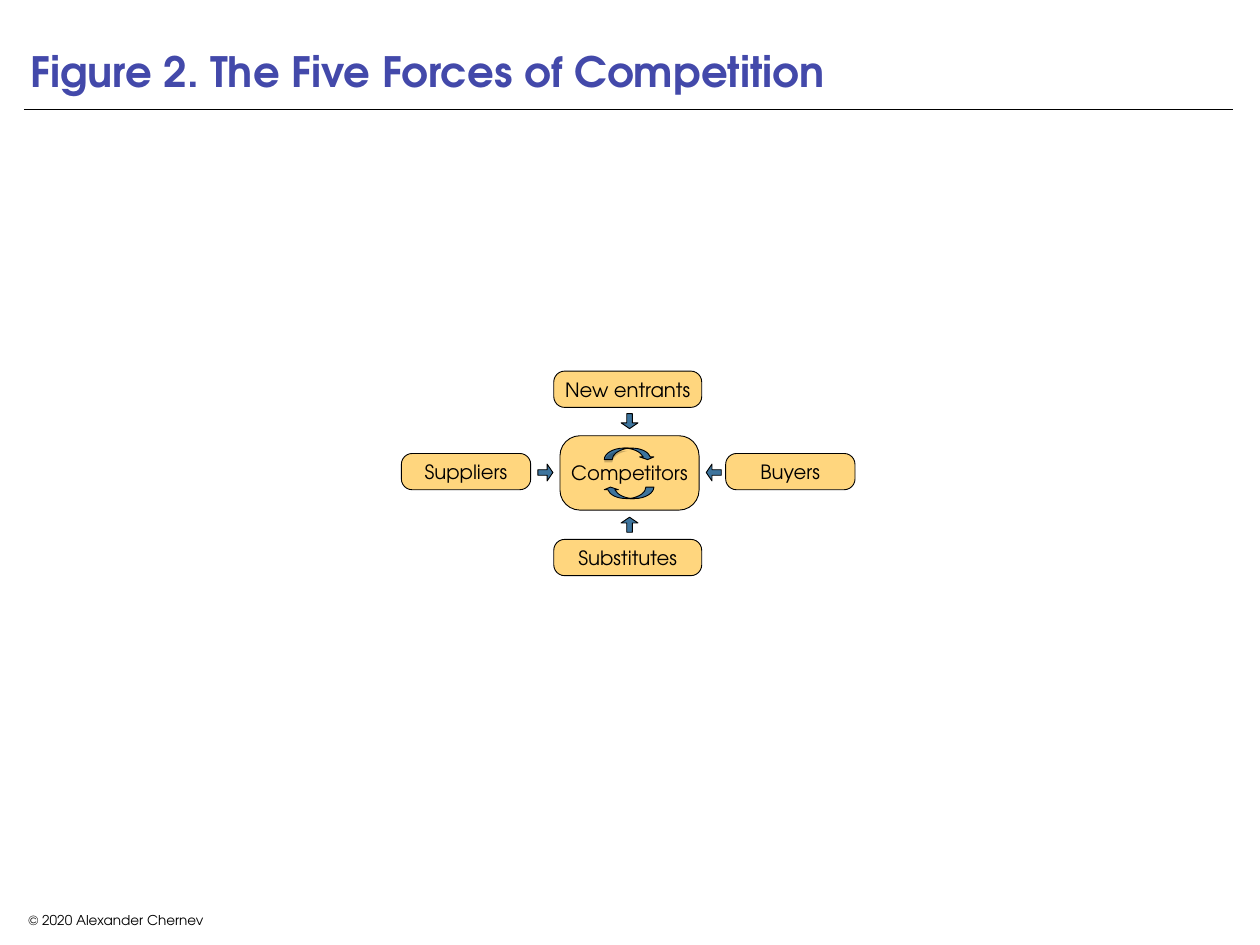
from lxml.etree import SubElement
from pptx import Presentation
from pptx.dml.color import RGBColor
from pptx.enum.shapes import MSO_CONNECTOR, MSO_SHAPE
from pptx.enum.text import MSO_ANCHOR, MSO_AUTO_SIZE, PP_ALIGN
from pptx.oxml.ns import qn
from pptx.util import Inches, Pt

FONT = "TeX Gyre Adventor"
COLORS = {"title": "4349AA", "ink": "000000", "box": "FFD67E", "arrow": "3D749D"}
FORCES = [("Competitors", 1.79, 0.73, 1.57, 0.84, 0.27),
          ("New entrants", 1.72, 0, 1.67, 0.41, 0.3),
          ("Buyers", 3.66, 0.93, 1.46, 0.41, 0.3),
          ("Substitutes", 1.72, 1.9, 1.67, 0.41, 0.3),
          ("Suppliers", 0, 0.93, 1.46, 0.41, 0.3)]
ARROWS = [(1.54, 1.05, 0), (3.44, 1.05, 180), (2.49, 1.64, 270), (2.49, 0.47, 90)]
CYCLE_W, CYCLE_H = 0.56, 0.13
HEAD = [[(0.49, 0.13)], [(0.4, 0.1)], [(0.44, 0.1)],
        [(0.41, 0.04), (0.32, 0), (0.22, 0)], [(0.31, 0)],
        [(0.41, 0), (0.5, 0.04), (0.52, 0.1)], [(0.56, 0.1)]]
TAIL = [[(0.27, 0)], [(0.16, 0.02), (0.09, 0.07), (0.09, 0.13)], [(0, 0.13)],
        [(0, 0.06), (0.1, 0), (0.22, 0)], [(0.24, 0), (0.25, 0), (0.27, 0)]]


def rgb(name):
    return RGBColor.from_string(COLORS[name])


def set_text(sp, text, size, color, margin, anchor, align, bold=False):
    tf = sp.text_frame
    frame = {"word_wrap": True, "auto_size": MSO_AUTO_SIZE.NONE, "vertical_anchor": anchor}
    for side in ("left", "top", "right", "bottom"):
        frame["margin_" + side] = Inches(margin)
    for name, value in frame.items():
        setattr(tf, name, value)
    p = tf.paragraphs[0]
    p.alignment = align
    r = p.add_run()
    r.text = text
    for name, value in {"name": FONT, "size": Pt(size), "bold": bold}.items():
        setattr(r.font, name, value)
    r.font.color.rgb = rgb(color)


def paint(sp, fill, outlined=True):
    sp.shadow.inherit = False
    sp.fill.solid()
    sp.fill.fore_color.rgb = rgb(fill)
    if outlined:
        sp.line.color.rgb = rgb("ink")
        sp.line.width = Pt(0.75)
    else:
        sp.line.fill.background()


def add_block(s, kind, left, top, width, height, fill, adjustments):
    sp = s.shapes.add_shape(kind, Inches(left), Inches(top), Inches(width), Inches(height))
    for i, value in enumerate(adjustments):
        sp.adjustments[i] = value
    paint(sp, fill)
    return sp


def bend_curves(sp, contours):
    steps = sp._element.iter(qn("a:moveTo"), qn("a:lnTo"))
    groups = [[next(steps) for _ in segment] for contour in contours for segment in contour]
    for first, *others in groups:
        if others:
            first.tag = qn("a:cubicBezTo")
            for step in others:
                first.append(step[0])
                step.getparent().remove(step)


def add_outline(s, contours, left, top, turned=False):
    def place(point):
        x, y = point
        if turned:
            x, y = CYCLE_W - x, CYCLE_H - y
        return Inches(left + x), Inches(top + y)

    builder = None
    for contour in contours:
        start, *rest = [place(point) for segment in contour for point in segment]
        if builder is None:
            builder = s.shapes.build_freeform(*start)
        else:
            builder.move_to(*start)
        builder.add_line_segments(rest, close=True)
    sp = builder.convert_to_shape()
    bend_curves(sp, contours)
    return sp


def add_cycle(s, left, top, height):
    paint(add_outline(s, [HEAD, TAIL], left, top), "arrow")
    shade = add_outline(s, [TAIL], left, top + 0.03)
    paint(shade, "ink", outlined=False)
    color = shade.fill._xPr.find(qn("a:solidFill"))[0]
    SubElement(color, qn("a:alpha"), val="20000")
    paint(add_outline(s, [HEAD, TAIL], left, top + height - CYCLE_H, turned=True), "arrow")


def add_heading(s, left, top, width, height):
    sp = s.shapes.title
    for name, value in zip(("left", "top", "width", "height"), (left, top, width, height)):
        setattr(sp, name, Inches(value))
    set_text(sp, "Figure 2. The Five Forces of Competition", 34, "title", 0.07,
             MSO_ANCHOR.BOTTOM, PP_ALIGN.LEFT, bold=True)
    y = Inches(top + height + 0.09)
    rule = s.shapes.add_connector(MSO_CONNECTOR.STRAIGHT, Inches(left), y,
                                  Inches(left + width), y)
    rule.line.color.rgb = rgb("ink")
    rule.line.width = Pt(0.5)
    SubElement(rule._element.spPr, qn("a:effectLst"))


def add_forces(s, left, top):
    for text, x, y, width, height, corner in FORCES:
        sp = add_block(s, MSO_SHAPE.ROUNDED_RECTANGLE, left + x, top + y, width, height,
                       "box", [corner])
        set_text(sp, text, 16, "ink", 0.04, MSO_ANCHOR.MIDDLE, PP_ALIGN.CENTER)
    add_cycle(s, left + 2.29, top + 0.87, 0.57)
    for x, y, rotation in ARROWS:
        arrow = add_block(s, MSO_SHAPE.RIGHT_ARROW, left + x, top + y, 0.17, 0.19,
                          "arrow", [0.33, 0.38])
        arrow.rotation = rotation


def add_credit(s, left, top, width, height):
    sp = s.shapes.add_textbox(Inches(left), Inches(top), Inches(width), Inches(height))
    set_text(sp, "© 2020 Alexander Chernev", 11, "ink", 0.07, MSO_ANCHOR.BOTTOM, PP_ALIGN.LEFT)


def main():
    prs = Presentation()
    prs.slide_width, prs.slide_height = Inches(14.22), Inches(10.67)
    s = prs.slides.add_slide(prs.slide_layouts[5])
    add_heading(s, 0.27, 0, 13.65, 1.15)
    add_forces(s, 4.53, 4.19)
    add_credit(s, 0.25, 10.23, 3.47, 0.32)
    prs.save("out.pptx")


if __name__ == "__main__":
    main()
